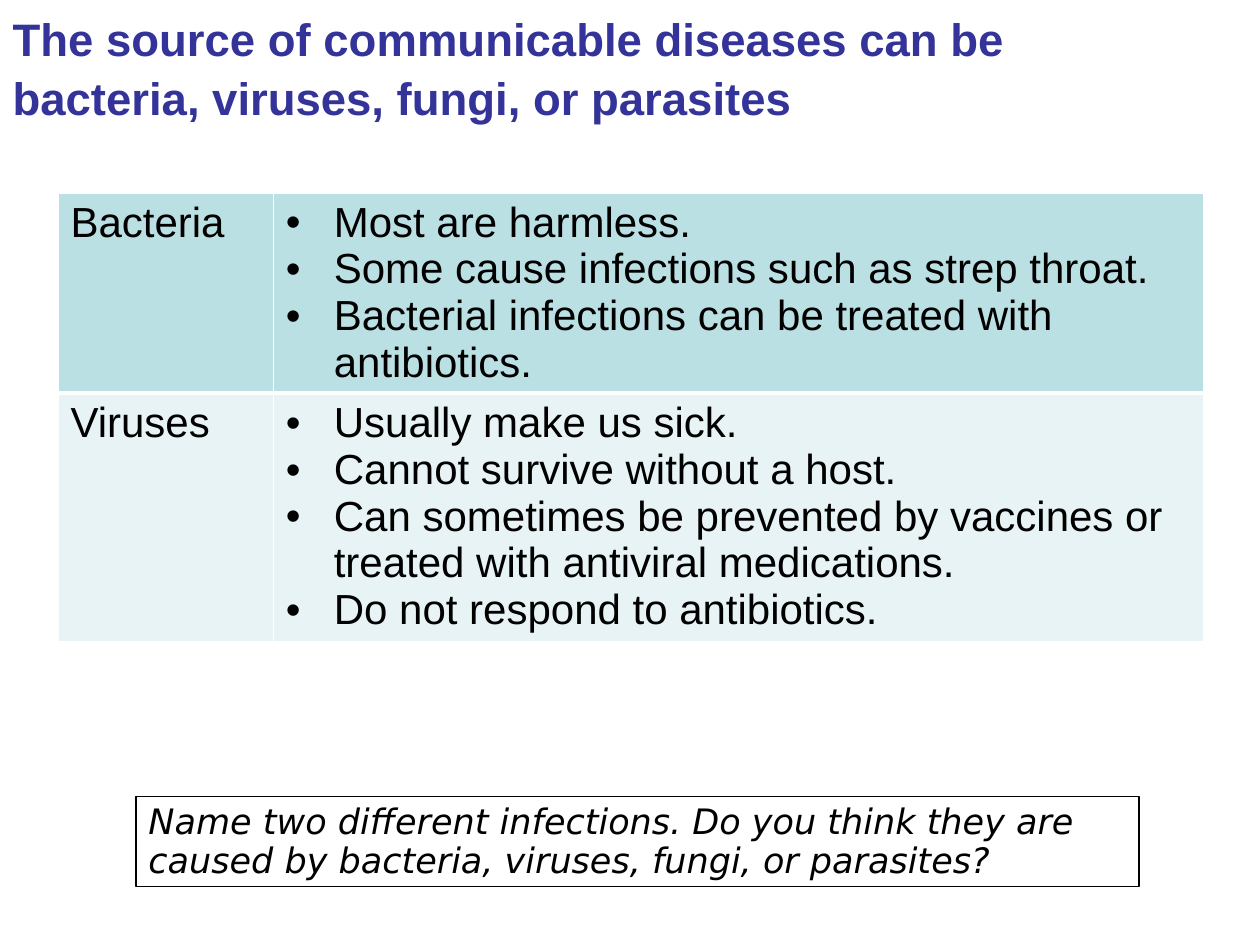
from lxml import etree
from pptx import Presentation
from pptx.dml.color import RGBColor
from pptx.enum.shapes import MSO_SHAPE
from pptx.enum.text import MSO_ANCHOR, PP_ALIGN
from pptx.oxml.ns import qn
from pptx.util import Inches, Pt

TOP, LEFT, RECTANGLE = MSO_ANCHOR.TOP, PP_ALIGN.LEFT, MSO_SHAPE.RECTANGLE
TITLE_ONLY = 5
WIDTH, HEIGHT = Inches(10), Inches(7.5)

TITLE_FORMAT = {"name": "Arial", "size": Pt(26), "bold": True}
TABLE_FORMAT = {"name": "Arial", "size": Pt(24)}
QUESTION_FORMAT = {"name": "DejaVu Sans", "size": Pt(20), "italic": True}

SOURCES = [
    ("Bacteria", "BBE0E3", 1.59, [
        "Most are harmless.",
        "Some cause infections such as strep throat.",
        "Bacterial infections can be treated with antibiotics.",
    ]),
    ("Viruses", "E7F3F4", 1.97, [
        "Usually make us sick.",
        "Cannot survive without a host.",
        "Can sometimes be prevented by vaccines or treated with antiviral medications.",
        "Do not respond to antibiotics.",
    ]),
]


def color(value):
    return RGBColor.from_string(value)


def place(shape, left, top, width, height):
    """Position a shape by shares of the slide's size."""
    shape.left, shape.width = int(WIDTH * left), int(WIDTH * width)
    shape.top, shape.height = int(HEIGHT * top), int(HEIGHT * height)


def add_bullet(paragraph):
    properties = paragraph._p.get_or_add_pPr()
    properties.set("marL", str(Inches(0.38)))
    properties.set("indent", str(-Inches(0.38)))
    etree.SubElement(properties, qn("a:buFont")).set("typeface", "Arial")
    etree.SubElement(properties, qn("a:buChar")).set("char", "•")


def set_borders(cell, widths):
    """Draw white borders, with widths in points keyed by side."""
    properties = cell._tc.get_or_add_tcPr()
    for index, side in enumerate(("lnL", "lnR", "lnT", "lnB")):
        line = etree.Element(qn(f"a:{side}"), w=str(Pt(widths.get(side, 1))))
        fill = etree.SubElement(line, qn("a:solidFill"))
        etree.SubElement(fill, qn("a:srgbClr")).set("val", "FFFFFF")
        properties.insert(index, line)


class SlideBuilder:
    """Holds the presentation's style and the current slide."""

    title_color, text_color = "333399", "000000"

    def __init__(self, presentation):
        layout = presentation.slide_layouts[TITLE_ONLY]
        self.slide = presentation.slides.add_slide(layout)

    def fill_text(self, frame, lines, formats, text_color, spacing=1.0, bullets=False):
        frame.word_wrap = True
        frame.vertical_anchor = TOP
        for index, line in enumerate(lines):
            paragraph = frame.paragraphs[0] if index == 0 else frame.add_paragraph()
            paragraph.text = line
            paragraph.alignment = LEFT
            paragraph.line_spacing = spacing
            paragraph.space_before = Pt(0)
            if bullets:
                add_bullet(paragraph)
            font = paragraph.runs[0].font
            for name, value in formats.items():
                setattr(font, name, value)
            font.color.rgb = color(text_color)

    def title(self, text, *area):
        shape = self.slide.shapes.title
        place(shape, *area)
        self.fill_text(shape.text_frame, [text], TITLE_FORMAT, self.title_color, 1.08)

    def table(self, rows, left, top, column_widths):
        frame = self.slide.shapes.add_table(
            len(rows), len(column_widths), int(WIDTH * left), int(HEIGHT * top),
            int(WIDTH * sum(column_widths)), Inches(sum(row[2] for row in rows)))
        table = frame.table
        for column, width in zip(table.columns, column_widths):
            column.width = int(WIDTH * width)
        for index, (source, fill, height, facts) in enumerate(rows):
            table.rows[index].height = Inches(height)
            widths = {"lnB": 3} if index == 0 else {"lnT": 3}
            for cell, lines in zip(table.rows[index].cells, ([source], facts)):
                cell.fill.solid()
                cell.fill.fore_color.rgb = color(fill)
                set_borders(cell, widths)
                self.fill_text(cell.text_frame, lines, TABLE_FORMAT, self.text_color,
                               bullets=lines is facts)

    def question(self, text, *area):
        shape = self.slide.shapes.add_shape(RECTANGLE, 0, 0, 0, 0)
        place(shape, *area)
        shape.shadow.inherit = False
        shape.fill.background()
        shape.line.color.rgb = color(self.text_color)
        shape.line.width = Pt(0.75)
        self.fill_text(shape.text_frame, [text], QUESTION_FORMAT, self.text_color, 0.94)


def main():
    presentation = Presentation()
    presentation.slide_width, presentation.slide_height = WIDTH, HEIGHT
    builder = SlideBuilder(presentation)
    builder.title("The source of communicable diseases can be bacteria, viruses, "
                  "fungi, or parasites", 0, 0, 0.96, 0.12)
    builder.table(SOURCES, 0.046, 0.204, (0.171, 0.738))
    builder.question("Name two different infections. Do you think they are caused by "
                     "bacteria, viruses, fungi, or parasites?", 0.108, 0.843, 0.796, 0.095)
    presentation.save("out.pptx")


if __name__ == "__main__":
    main()
